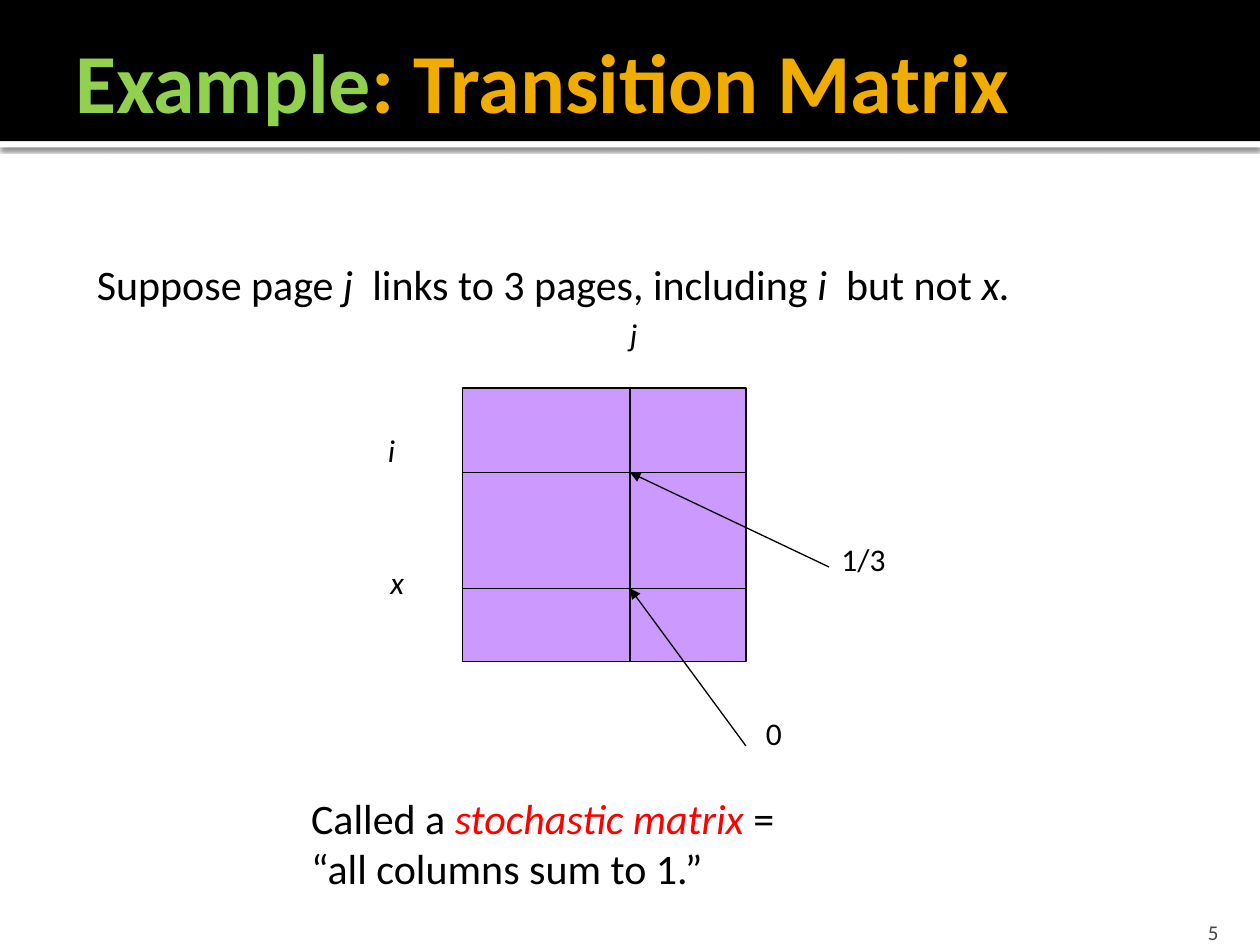
from dataclasses import dataclass

from lxml import etree
from pptx import Presentation
from pptx.dml.color import RGBColor
from pptx.enum.shapes import MSO_CONNECTOR, MSO_SHAPE
from pptx.enum.text import MSO_ANCHOR, MSO_AUTO_SIZE, PP_ALIGN
from pptx.oxml import parse_xml
from pptx.oxml.ns import nsdecls, qn
from pptx.util import Inches, Pt


@dataclass(frozen=True)
class Theme:
    font: str = "Calibri"
    title_size: int = 48
    body_size: int = 24
    label_size: int = 18
    number_size: int = 12
    line_width: float = 0.75
    black: str = "000000"
    white: str = "FFFFFF"
    green: str = "92D050"
    gold: str = "F0AD00"
    red: str = "FF0000"
    purple: str = "CC99FF"
    gray: str = "454545"


THEME = Theme()
ITALIC = {"italic": True}

# A paragraph is a list of runs: (text, overrides).
TITLE = [[("Example", {"color": THEME.green}), (": Transition Matrix", {})]]
PREMISE = [[
    ("Suppose page ", {}), ("j ", ITALIC), (" links to 3 pages, including ", {}),
    ("i ", ITALIC), (" but not", {}), (" x.", ITALIC),
]]
CONCLUSION = [
    [("Called a ", {}), ("stochastic matrix ", {"italic": True, "color": THEME.red}), ("=", {})],
    [("“all columns sum to 1.”", {})],
]
LABELS = [  # text, overrides, box
    ("i", ITALIC, (2.98, 3.37, 0.28, 0.5)),
    ("j", ITALIC, (4.9, 2.45, 0.3, 0.5)),
    ("x", ITALIC, (3, 4.42, 0.37, 0.5)),
    ("1/3", {}, (6.58, 4.24, 0.69, 0.5)),
    ("0", {}, (5.98, 5.62, 0.38, 0.5)),
]

LEFT, TOP, RIGHT, BOTTOM = 3.67, 3.08, 5.92, 5.25
COLUMN_J, ROW_I, ROW_X = 5, 3.75, 4.67
GRID_LINES = [
    ((LEFT, ROW_I), (RIGHT, ROW_I)),
    ((LEFT, ROW_X), (RIGHT, ROW_X)),
    ((COLUMN_J, TOP), (COLUMN_J, BOTTOM)),
]
ARROWS = [
    ((6.58, 4.5), (COLUMN_J, ROW_I)),
    ((RIGHT, 5.92), (COLUMN_J, ROW_X)),
]


def rgb(color):
    return RGBColor.from_string(color)


def add_rectangle(slide, box, fill, outlined=False):
    shape = slide.shapes.add_shape(MSO_SHAPE.RECTANGLE, *map(Inches, box))
    shape.shadow.inherit = False
    shape.fill.solid()
    shape.fill.fore_color.rgb = rgb(fill)
    if outlined:
        shape.line.color.rgb = rgb(THEME.black)
        shape.line.width = Pt(THEME.line_width)
    else:
        shape.line.fill.background()
    return shape


def add_drop_shadow(shape):
    effects = shape._element.spPr.find(qn("a:effectLst"))
    effects.append(parse_xml(
        f'<a:outerShdw {nsdecls("a")} blurRad="{Pt(2.5)}" dist="{Pt(0.8)}" dir="5400000" rotWithShape="0">'
        f'<a:srgbClr val="{THEME.black}"><a:alpha val="60000"/></a:srgbClr></a:outerShdw>'
    ))


def add_line(slide, start, end, arrow=False):
    line = slide.shapes.add_connector(MSO_CONNECTOR.STRAIGHT, *map(Inches, start + end))
    line.line.color.rgb = rgb(THEME.black)
    line.line.width = Pt(THEME.line_width)
    if arrow:
        etree.SubElement(line.line._get_or_add_ln(), qn("a:tailEnd"), type="triangle")
    etree.SubElement(line._element.spPr, qn("a:effectLst"))


def add_text(slide, box, paragraphs, size, color=THEME.black, bold=False):
    """Add an unwrapped text box that grows with its text; return its frame."""
    frame = slide.shapes.add_textbox(*map(Inches, box)).text_frame
    frame.word_wrap = False
    frame.auto_size = MSO_AUTO_SIZE.SHAPE_TO_FIT_TEXT
    for index, runs in enumerate(paragraphs):
        paragraph = frame.add_paragraph() if index else frame.paragraphs[0]
        paragraph.font.name = THEME.font
        paragraph.font.size = Pt(size)
        paragraph.font.bold = bold
        paragraph.font.color.rgb = rgb(color)
        for text, overrides in runs:
            run = paragraph.add_run()
            run.text = text
            if "italic" in overrides:
                run.font.italic = overrides["italic"]
            if "color" in overrides:
                run.font.color.rgb = rgb(overrides["color"])
    return frame


def fix_box(frame, anchor):
    frame.word_wrap = True
    frame.auto_size = MSO_AUTO_SIZE.NONE
    frame.vertical_anchor = anchor


def add_header(slide):
    add_drop_shadow(add_rectangle(slide, (0, 1.12, 10, 0.05), THEME.white))
    add_rectangle(slide, (0, 0, 10, 1.12), THEME.black)
    title = add_text(slide, (0.5, 0.17, 9.5, 0.92), TITLE, THEME.title_size, THEME.gold, bold=True)
    fix_box(title, MSO_ANCHOR.MIDDLE)
    title.margin_right = Inches(0.05)


def add_slide_number(slide):
    number = add_text(slide, (8.97, 7.2, 0.8, 0.3), [[("5", {})]], THEME.number_size, THEME.gray)
    fix_box(number, MSO_ANCHOR.BOTTOM)
    number.margin_bottom = 0
    number.paragraphs[0].alignment = PP_ALIGN.RIGHT


def add_matrix(slide):
    add_rectangle(slide, (LEFT, TOP, RIGHT - LEFT, BOTTOM - TOP), THEME.purple, outlined=True)
    for start, end in GRID_LINES:
        add_line(slide, start, end)
    for start, end in ARROWS:
        add_line(slide, start, end, arrow=True)
    for text, overrides, box in LABELS:
        add_text(slide, box, [[(text, overrides)]], THEME.label_size)


def main():
    presentation = Presentation()
    presentation.slide_width, presentation.slide_height = Inches(10), Inches(7.5)
    slide = presentation.slides.add_slide(presentation.slide_layouts[6])
    add_header(slide)
    add_slide_number(slide)
    add_text(slide, (0.67, 2, 7.56, 0.5), PREMISE, THEME.body_size)
    add_matrix(slide)
    add_text(slide, (2.37, 6.24, 3.92, 0.91), CONCLUSION, THEME.body_size)
    presentation.save("out.pptx")


if __name__ == "__main__":
    main()
